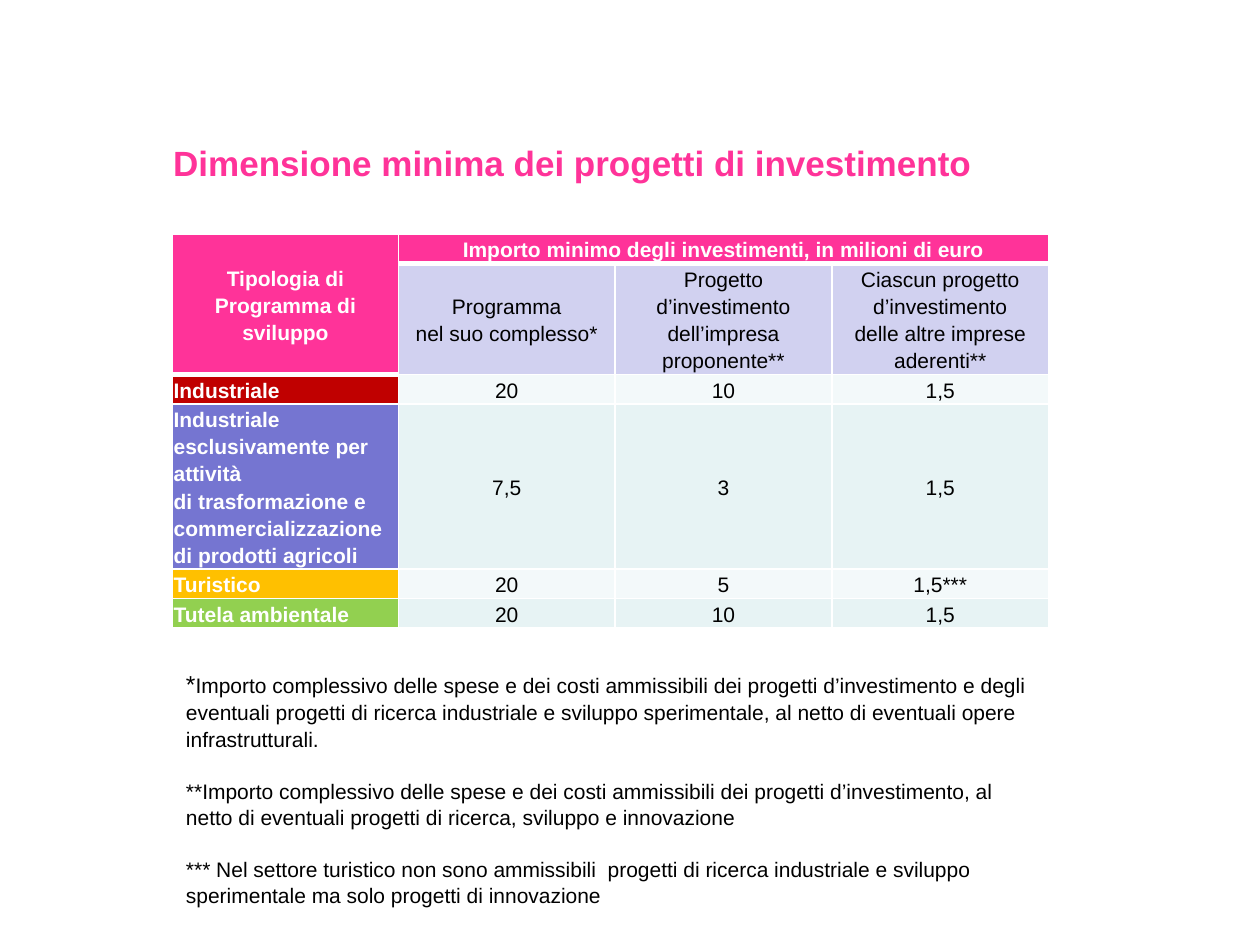
from lxml import etree
from pptx import Presentation
from pptx.dml.color import RGBColor
from pptx.enum import text
from pptx.oxml.ns import qn
from pptx.util import Cm, Pt

PINK, LILAC, WHITE, BLACK = "FF3399", "D1D1F0", "FFFFFF", "000000"


def write(par, words, size, color, bold=False):
    """Add words to a paragraph, with a line break at each newline."""
    for i, line in enumerate(words.split("\n")):
        if i:
            par.add_line_break()
        run = par.add_run()
        run.text = line
        font = run.font
        font.name, font.size, font.bold = "Arial", Pt(size), bold
        font.color.rgb = RGBColor.from_string(color)


def edge(cell, low):
    """Draw white cell borders, with the bottom one low points wide."""
    props = cell._tc.get_or_add_tcPr()
    for i, (tag, width) in enumerate((("lnL", 1), ("lnR", 1), ("lnT", 1), ("lnB", low))):
        line = etree.Element(qn("a:" + tag), w=str(Pt(width)))
        fill = etree.SubElement(line, qn("a:solidFill"))
        etree.SubElement(fill, qn("a:srgbClr"), val=WHITE)
        props.insert(i, line)


deck = Presentation()
deck.slide_width, deck.slide_height = Cm(25.4), Cm(19.05)
slide = deck.slides.add_slide(deck.slide_layouts[5])

# Title
title = slide.shapes.title
title.left, title.top, title.width, title.height = Cm(0.71), Cm(2.72), Cm(21.8), Cm(1.8)
frame = title.text_frame
frame.margin_left = Cm(2.78)
frame.vertical_anchor = text.MSO_ANCHOR.TOP
frame.paragraphs[0].alignment = text.PP_ALIGN.LEFT
write(frame.paragraphs[0], "Dimensione minima dei progetti di investimento", 20, PINK, True)

# Table
rows = [
    ("Tipologia di\nProgramma di sviluppo",
     "Importo minimo degli investimenti, in milioni di euro", "", ""),
    ("", "Programma\nnel suo complesso*",
     "Progetto d’investimento\ndell’impresa\nproponente**",
     "Ciascun progetto\nd’investimento\ndelle altre imprese\naderenti**"),
    ("Industriale", "20", "10", "1,5"),
    ("Industriale\nesclusivamente per attività\ndi trasformazione e "
     "commercializzazione\ndi prodotti agricoli", "7,5", "3", "1,5"),
    ("Turistico", "20", "5", "1,5***"),
    ("Tutela ambientale", "20", "10", "1,5"),
]
heads = [PINK, PINK, "C00000", "7575D1", "FFC000", "92D050"]
fills = [PINK, LILAC, "F3F9FA", "E7F3F4", "F3F9FA", "E7F3F4"]
tall = [0.59, 2.24, 0.59, 3.33, 0.59, 0.59]
wide = [4.55, 4.37, 4.37, 4.37]

grid = slide.shapes.add_table(6, 4, Cm(3.48), Cm(4.72), Cm(sum(wide)), Cm(sum(tall))).table
for col, size in zip(grid.columns, wide):
    col.width = Cm(size)
grid.cell(0, 0).merge(grid.cell(1, 0))
grid.cell(0, 1).merge(grid.cell(0, 3))

for r, row in enumerate(rows):
    grid.rows[r].height = Cm(tall[r])
    for c, words in enumerate(row):
        cell = grid.cell(r, c)
        cell.margin_left = cell.margin_right = Cm(0.02)
        cell.margin_top = cell.margin_bottom = Cm(0.02)
        cell.vertical_anchor = text.MSO_ANCHOR.MIDDLE
        cell.fill.solid()
        cell.fill.fore_color.rgb = RGBColor.from_string(heads[r] if c == 0 else fills[r])
        edge(cell, 3 if r == 0 or (r == 1 and c == 0) else 1)
        if words:
            par = cell.text_frame.paragraphs[0]
            par.line_spacing = 1.15
            left = c == 0 and r > 1
            par.alignment = text.PP_ALIGN.LEFT if left else text.PP_ALIGN.CENTER
            bold = c == 0 or r == 0
            write(par, words, 12, WHITE if bold else BLACK, bold)

# Notes
notes = [
    "Importo complessivo delle spese e dei costi ammissibili dei progetti d’investimento "
    "e degli eventuali progetti di ricerca industriale e sviluppo sperimentale, "
    "al netto di eventuali opere infrastrutturali.",
    "**Importo complessivo delle spese e dei costi ammissibili dei progetti "
    "d’investimento, al netto di eventuali progetti di ricerca, sviluppo e innovazione",
    "*** Nel settore turistico non sono ammissibili  progetti di ricerca industriale "
    "e sviluppo sperimentale ma solo progetti di innovazione",
]
frame = slide.shapes.add_textbox(Cm(3.5), Cm(13.34), Cm(17.8), Cm(5.13)).text_frame
frame.word_wrap = True
for i, note in enumerate(notes):
    par = frame.add_paragraph() if i else frame.paragraphs[0]
    par.line_spacing = 1.05
    if i:
        par.space_before = Pt(14.4)
    else:
        write(par, "*", 14, BLACK)
    write(par, note, 12, BLACK)

deck.save("out.pptx")
